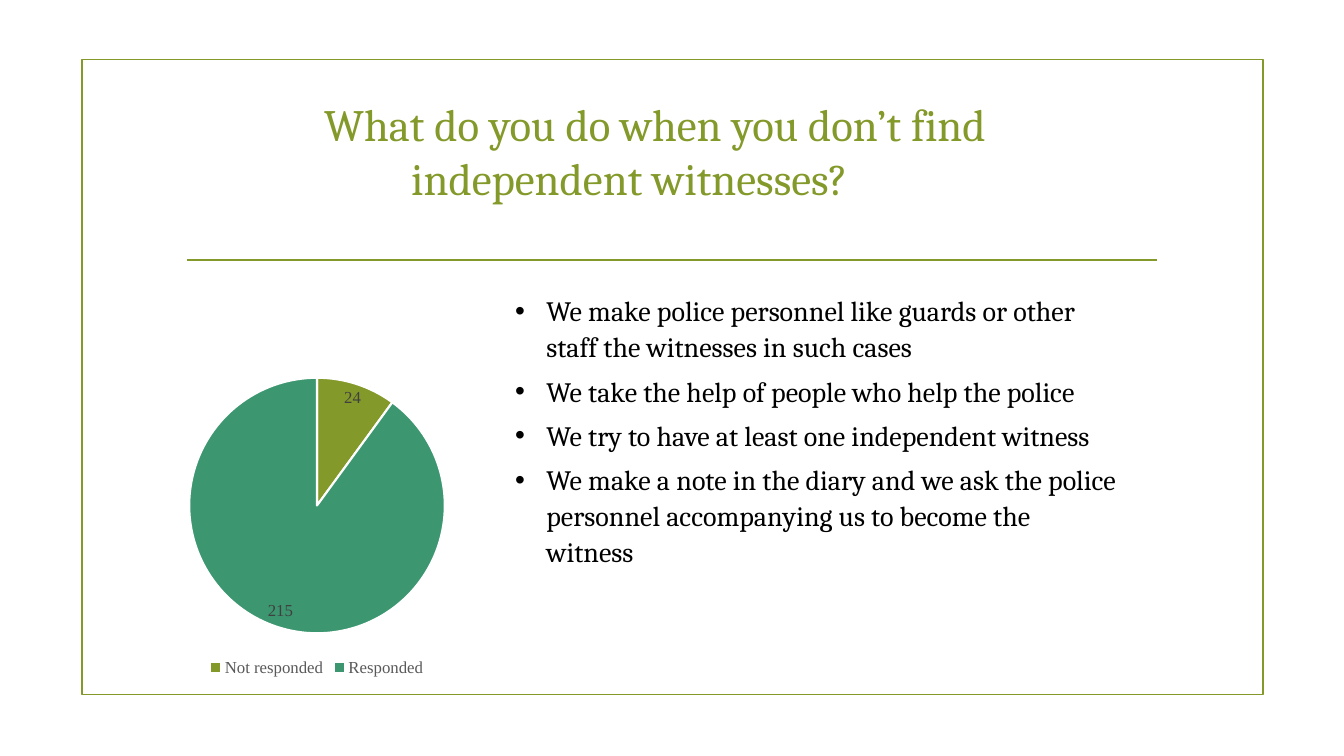
from lxml.etree import SubElement
from pptx import Presentation
from pptx.chart.data import CategoryChartData
from pptx.dml.color import RGBColor
from pptx.enum.chart import XL_CHART_TYPE, XL_LABEL_POSITION, XL_LEGEND_POSITION
from pptx.enum.shapes import MSO_CONNECTOR, MSO_SHAPE
from pptx.enum.text import MSO_ANCHOR, MSO_AUTO_SIZE, PP_ALIGN
from pptx.oxml.ns import qn
from pptx.util import Inches, Pt

SLIDE_WIDTH, SLIDE_HEIGHT = Inches(13.33), Inches(7.5)
OLIVE = RGBColor(0x83, 0x99, 0x2A)
GREEN = RGBColor(0x3C, 0x97, 0x70)
BLACK = RGBColor(0x00, 0x00, 0x00)
WHITE = RGBColor(0xFF, 0xFF, 0xFF)
LABEL_GRAY = RGBColor(0x40, 0x40, 0x40)
LEGEND_GRAY = RGBColor(0x59, 0x59, 0x59)
TEXT_FONT, CHART_FONT = "Cambria", "Times New Roman"
RULE_WIDTH = Pt(1.25)
BULLET_INDENT = Inches(0.31)

TITLE = "What do you do when you don’t find independent witnesses?"
ANSWERS = [
    "We make police personnel like guards or other staff the witnesses in such cases",
    "We take the help of people who help the police",
    "We try to have at least one independent witness",
    "We make a note in the diary and we ask the police personnel "
    "accompanying us to become the witness",
]
RESPONSES = {"Not responded": 24, "Responded": 215}


def area(left, top, width, height):
    """Turn percentages of the slide into left, top, width and height."""
    return (int(SLIDE_WIDTH * left / 100), int(SLIDE_HEIGHT * top / 100),
            int(SLIDE_WIDTH * width / 100), int(SLIDE_HEIGHT * height / 100))


def set_font(font, name, size, color):
    font.name, font.size = name, Pt(size)
    font.color.rgb = color


def place(shape, box):
    shape.left, shape.top, shape.width, shape.height = box


def write_paragraph(paragraph, text, size, color, align=PP_ALIGN.LEFT,
                    margin=0, indent=0, bullet=None, line_spacing=1.0, space_after=0):
    paragraph.text = text
    paragraph.alignment = align
    paragraph.line_spacing = line_spacing
    paragraph.space_before, paragraph.space_after = Pt(0), Pt(space_after)
    properties = paragraph._p.get_or_add_pPr()
    properties.set("marL", str(margin))
    properties.set("indent", str(indent))
    if bullet:
        SubElement(properties, qn("a:buFont")).set("typeface", "Arial")
        SubElement(properties, qn("a:buChar")).set("char", bullet)
    set_font(paragraph.runs[0].font, TEXT_FONT, size, color)


def add_frame(slide, box):
    frame = slide.shapes.add_shape(MSO_SHAPE.RECTANGLE, *box)
    frame.shadow.inherit = False
    frame.fill.background()
    frame.line.color.rgb = OLIVE
    frame.line.width = RULE_WIDTH


def add_rule(slide, box):
    left, top, width, height = box
    rule = slide.shapes.add_connector(
        MSO_CONNECTOR.STRAIGHT, left, top, left + width, top + height)
    rule.line.color.rgb = OLIVE
    rule.line.width = RULE_WIDTH
    SubElement(rule._element.spPr, qn("a:effectLst"))


def fill_title(title, box):
    place(title, box)
    text_frame = title.text_frame
    text_frame.auto_size = MSO_AUTO_SIZE.NONE
    text_frame.vertical_anchor = MSO_ANCHOR.MIDDLE
    write_paragraph(text_frame.paragraphs[0], TITLE, 32, OLIVE,
                    align=PP_ALIGN.CENTER, indent=Inches(0.51))


def fill_answers(body, box):
    place(body, box)
    text_frame = body.text_frame
    text_frame.auto_size = MSO_AUTO_SIZE.NONE
    text_frame.vertical_anchor = MSO_ANCHOR.TOP
    for index, answer in enumerate(ANSWERS):
        paragraph = text_frame.add_paragraph() if index else text_frame.paragraphs[0]
        write_paragraph(paragraph, answer, 20, BLACK, margin=BULLET_INDENT,
                        indent=-BULLET_INDENT, bullet="•",
                        line_spacing=1.07, space_after=6)


def add_pie(slide, box):
    data = CategoryChartData()
    data.categories = list(RESPONSES)
    data.add_series("Series 1", list(RESPONSES.values()))
    chart = slide.shapes.add_chart(XL_CHART_TYPE.PIE, *box, data).chart
    chart.has_title = False
    set_font(chart.font, CHART_FONT, 10, BLACK)

    # Legend
    chart.has_legend = True
    chart.legend.position = XL_LEGEND_POSITION.BOTTOM
    chart.legend.include_in_layout = False
    set_font(chart.legend.font, CHART_FONT, 12, LEGEND_GRAY)

    # Slices and their values
    plot = chart.plots[0]
    plot.vary_by_categories = True
    for index, color in enumerate((OLIVE, GREEN)):
        slice_format = plot.series[0].points[index].format
        slice_format.fill.solid()
        slice_format.fill.fore_color.rgb = color
        slice_format.line.color.rgb = WHITE
        slice_format.line.width = Pt(1.5)
    labels = plot.series[0].data_labels
    labels.show_value = True
    labels.show_percentage = False
    labels.position = XL_LABEL_POSITION.BEST_FIT
    set_font(labels.font, CHART_FONT, 12, LABEL_GRAY)


def main():
    presentation = Presentation()
    presentation.slide_width, presentation.slide_height = SLIDE_WIDTH, SLIDE_HEIGHT
    slide = presentation.slides.add_slide(presentation.slide_layouts[1])

    # Border and divider
    add_frame(slide, area(6.08, 7.87, 87.9, 84))
    add_rule(slide, area(13.95, 34.4, 72.15, 0))

    # Question, chart and answers
    fill_title(slide.shapes.title, area(17.93, 12.27, 57.83, 15.33))
    add_pie(slide, area(10.5, 48.13, 26.18, 41.87))
    fill_answers(slide.placeholders[1], area(37.58, 37.87, 46.5, 38.27))

    presentation.save("out.pptx")


if __name__ == "__main__":
    main()
